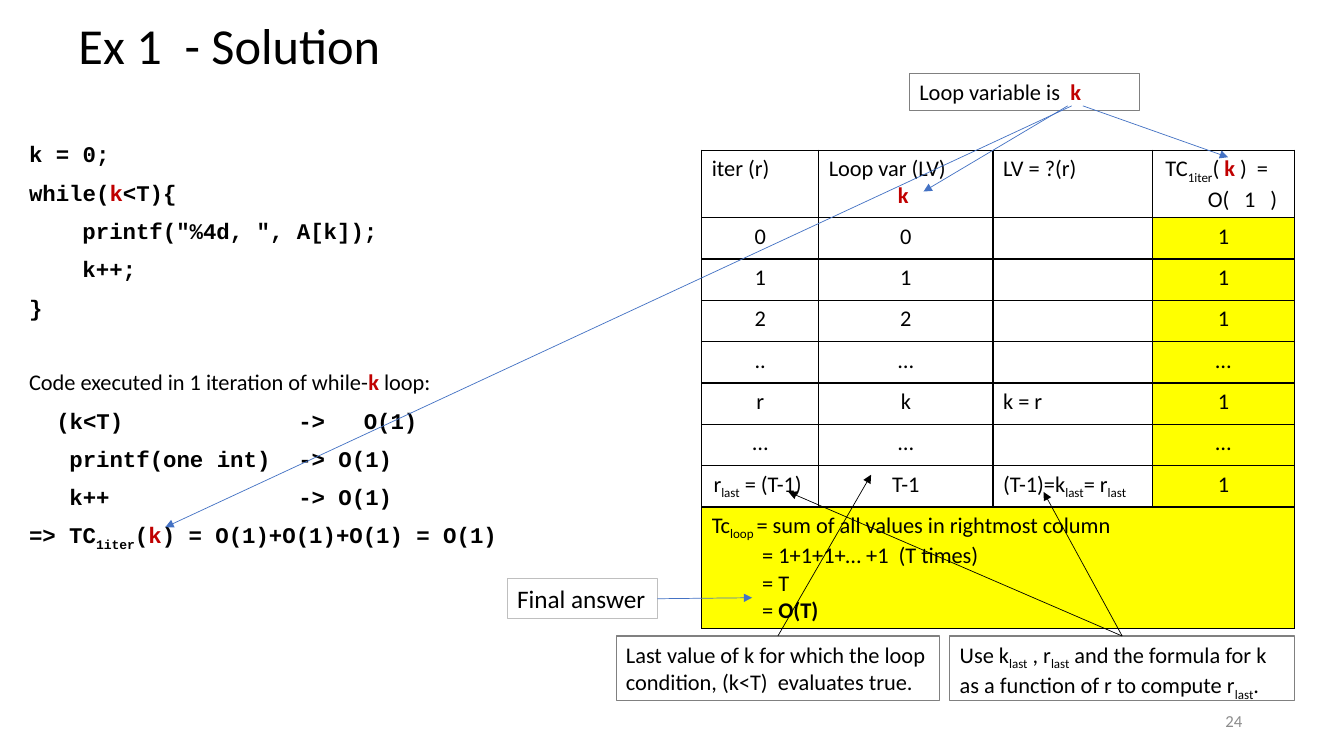
from lxml.etree import SubElement
from pptx import Presentation
from pptx.dml.color import RGBColor
from pptx.enum.shapes import MSO_CONNECTOR
from pptx.enum.text import MSO_ANCHOR, MSO_AUTO_SIZE, PP_ALIGN
from pptx.oxml import parse_xml
from pptx.oxml.ns import nsdecls, qn
from pptx.util import Inches, Pt

BLACK = RGBColor(0x00, 0x00, 0x00)
RED = RGBColor(0xC0, 0x00, 0x00)
BLUE = RGBColor(0x44, 0x72, 0xC4)
YELLOW = RGBColor(0xFF, 0xFF, 0x00)
GRAY = RGBColor(0x80, 0x80, 0x80)
LIGHT_GRAY = RGBColor(0xBF, 0xBF, 0xBF)
NUMBER_GRAY = RGBColor(0x8C, 0x8C, 0x8C)

TEXT = {"name": "Calibri", "size": Pt(16), "bold": False}
CODE = {"name": "Courier New", "size": Pt(16), "bold": True}
CODE_LINE = {"line_spacing": Pt(17.4), "space_before": Pt(10)}
CENTER = {"alignment": PP_ALIGN.CENTER}
RED_K = ("k", "red")
LAST = ("last", "sub")
ITER = ("1iter", "sub")


def line(*spans, font=TEXT, color=BLACK, indent=0, tabs=(), **layout):
    """Describe one paragraph; a span is a string or a (string, mark) pair."""
    return {"spans": spans, "font": font, "color": color, "indent": indent,
            "tabs": tabs, "layout": layout}


def code(*spans, **options):
    return line(*spans, **{"font": CODE, **CODE_LINE, **options})


def apply(target, values):
    for name, value in values.items():
        setattr(target, name, value)


class SlideBuilder:
    def __init__(self, page):
        self.page = page

    def add_lines(self, frame, lines):
        for index, item in enumerate(lines):
            para = frame.add_paragraph() if index else frame.paragraphs[0]
            apply(para, item["layout"])
            properties = para._p.get_or_add_pPr()
            if item["indent"]:
                properties.set("marL", str(Inches(item["indent"])))
            if item["tabs"]:
                stops = SubElement(properties, qn("a:tabLst"))
                for stop in item["tabs"]:
                    SubElement(stops, qn("a:tab"), pos=str(Inches(stop)), algn="l")
            for part in item["spans"]:
                text, mark = (part, "") if isinstance(part, str) else part
                span = para.add_run()
                span.text = text
                apply(span.font, item["font"])
                span.font.color.rgb = RED if mark == "red" else item["color"]
                if mark in ("red", "bold"):
                    span.font.bold = True
                if mark == "sub":
                    span._r.get_or_add_rPr().set("baseline", "-25000")

    def text(self, place, lines, border=None, **frame_format):
        box = self.page.shapes.add_textbox(*map(Inches, place))
        apply(box.text_frame, {"word_wrap": True, **frame_format})
        if border is not None:
            box.line.color.rgb = border
            box.line.width = Pt(0.75)
            box.text_frame.auto_size = MSO_AUTO_SIZE.SHAPE_TO_FIT_TEXT
        self.add_lines(box.text_frame, lines)
        return box

    def arrow(self, start, end, color, box=None, side=0):
        """Draw an arrow, joined at its start to a side of box if one is given."""
        arrow = self.page.shapes.add_connector(
            MSO_CONNECTOR.STRAIGHT, *map(Inches, start + end))
        if box is not None:
            arrow.begin_connect(box, side)
        arrow.line.color.rgb = color
        arrow.line.width = Pt(0.5)
        SubElement(arrow.line._get_or_add_ln(), qn("a:tailEnd"), type="triangle")
        SubElement(arrow._element.spPr, qn("a:effectLst"))

    def table(self, place, widths, heights, rows, highlighted):
        table = self.page.shapes.add_table(
            len(heights), len(widths), *map(Inches, place)).table
        apply(table, {"first_row": False, "horz_banding": False})
        for column, width in zip(table.columns, widths):
            column.width = Inches(width)
        for row, height in zip(table.rows, heights):
            row.height = Inches(height)
        table.cell(len(heights) - 1, 0).merge(
            table.cell(len(heights) - 1, len(widths) - 1))
        for r in range(len(heights)):
            for c in range(len(widths)):
                cell = table.cell(r, c)
                self.outline(cell)
                if highlighted(r, c):
                    cell.fill.solid()
                    cell.fill.fore_color.rgb = YELLOW
                else:
                    cell.fill.background()
                if c < len(rows[r]):
                    self.add_lines(cell.text_frame, rows[r][c])

    def outline(self, cell):
        for side in ("lnL", "lnR", "lnT", "lnB"):
            cell._tc.get_or_add_tcPr().append(parse_xml(
                f'<a:{side} {nsdecls("a")} w="{Pt(1)}"><a:solidFill>'
                f'<a:srgbClr val="{BLACK}"/></a:solidFill></a:{side}>'))


def centered(*spans):
    return [line(*spans, **CENTER)]


def iteration(r, variable, formula="", cost="1"):
    return [centered(r), centered(variable),
            [line(formula)] if formula else [], centered(cost)]


def main():
    deck = Presentation()
    deck.slide_width, deck.slide_height = Inches(13.33), Inches(7.5)
    page = deck.slides.add_slide(deck.slide_layouts[6])
    slide = SlideBuilder(page)

    slide.text((0.68, 0.13, 11.5, 0.69),
               [line("Ex 1  - Solution", font={**TEXT, "size": Pt(36)}, line_spacing=0.9)],
               vertical_anchor=MSO_ANCHOR.MIDDLE)

    first_step = (0.27, 2.67, 3.32)
    next_step = (0.4, 2.67)
    slide.text((0.19, 1.37, 5.2, 4.18), [
        code("k = 0;", space_before=Pt(0)),
        code("while(", RED_K, "<T){"),
        code('printf("%4d, ", A[k]);', indent=0.53),
        code("k++;", indent=0.53),
        code("}"),
        code("Code executed in 1 iteration of while-", RED_K, " loop:",
             font=TEXT, space_before=Pt(36)),
        code("\t(k<T)\t->\tO(1)", tabs=first_step),
        code("\tprintf(one int)\t-> O(1)", tabs=next_step),
        code("\tk++\t-> O(1)", tabs=next_step),
        code("=> TC", ITER, "(", RED_K, ") = O(1)+O(1)+O(1) = O(1)",
             space_before=Pt(12)),
    ])

    header = [
        [line("iter (r)")],
        [line("Loop var (LV)"), line(("k ", "red"), **CENTER)],
        [line("LV = ?(r)")],
        [line("TC", ITER, "( ", ("k ", "red"), ")  =", indent=0.03),
         line("\tO(\t1\t)", tabs=(0.45, 0.81, 1.07))],
    ]
    last_iteration = [
        centered("r", LAST, " = (T-1) "), centered("T-1"),
        [line("(T-1)=k", LAST, "= r", LAST)], centered("1"),
    ]
    total = [[
        line("Tc", ("loop ", "sub"), "= sum of all values in rightmost column"),
        line("= 1+1+1+… +1  (T times)", indent=0.5),
        line("= T", indent=0.5),
        line("=", (" O(T)", "bold"), indent=0.5),
    ]]
    rows = [
        header,
        *[iteration(number, number) for number in "012"],
        iteration("..", "…", cost="…"),
        iteration("r", "k", "k = r"),
        iteration("…", "…", cost="…"),
        last_iteration,
        total,
    ]
    slide.table((6.96, 1.49, 5.88, 4.74), (1.16, 1.73, 1.58, 1.41),
                [0.67] + [0.41] * 7 + [1.2], rows,
                lambda r, c: r == len(rows) - 1 or (r > 0 and c == 3))

    slide.text((9.42, 6.95, 3, 0.4),
               [line("24", font={**TEXT, "size": Pt(12)}, color=NUMBER_GRAY,
                     alignment=PP_ALIGN.RIGHT)],
               vertical_anchor=MSO_ANCHOR.MIDDLE)

    formula_box = slide.text((9.42, 6.31, 3.42, 0.64), [
        line("Use k", LAST, " , r", LAST,
             " and the formula for k as a function of r to compute r", LAST, ".")], GRAY)
    value_box = slide.text((6.11, 6.31, 3.21, 0.64), [
        line("Last value of k for which the loop condition, (k<T)  evaluates true.")], GRAY)
    answer_box = slide.text((5.03, 5.74, 1.49, 0.4), [
        line("Final answer", font={**TEXT, "size": Pt(18)})], LIGHT_GRAY, word_wrap=False)
    slide.text((9.02, 0.73, 2.28, 0.37), [line("Loop variable is  ", RED_K)], GRAY)

    slide.arrow((11.13, 6.31), (7.82, 4.88), BLACK, formula_box)
    slide.arrow((11.13, 6.31), (10.35, 4.88), BLACK, formula_box)
    slide.arrow((7.71, 6.31), (8.64, 4.71), BLACK, value_box)
    slide.arrow((6.52, 5.94), (7.46, 5.93), BLUE, answer_box, 3)
    slide.arrow((10.74, 1.05), (12.18, 1.56), BLUE)
    slide.arrow((10.59, 1.05), (9.16, 1.9), BLUE)
    slide.arrow((10.63, 1.05), (1.64, 5.23), BLUE)

    deck.save("out.pptx")


if __name__ == "__main__":
    main()
